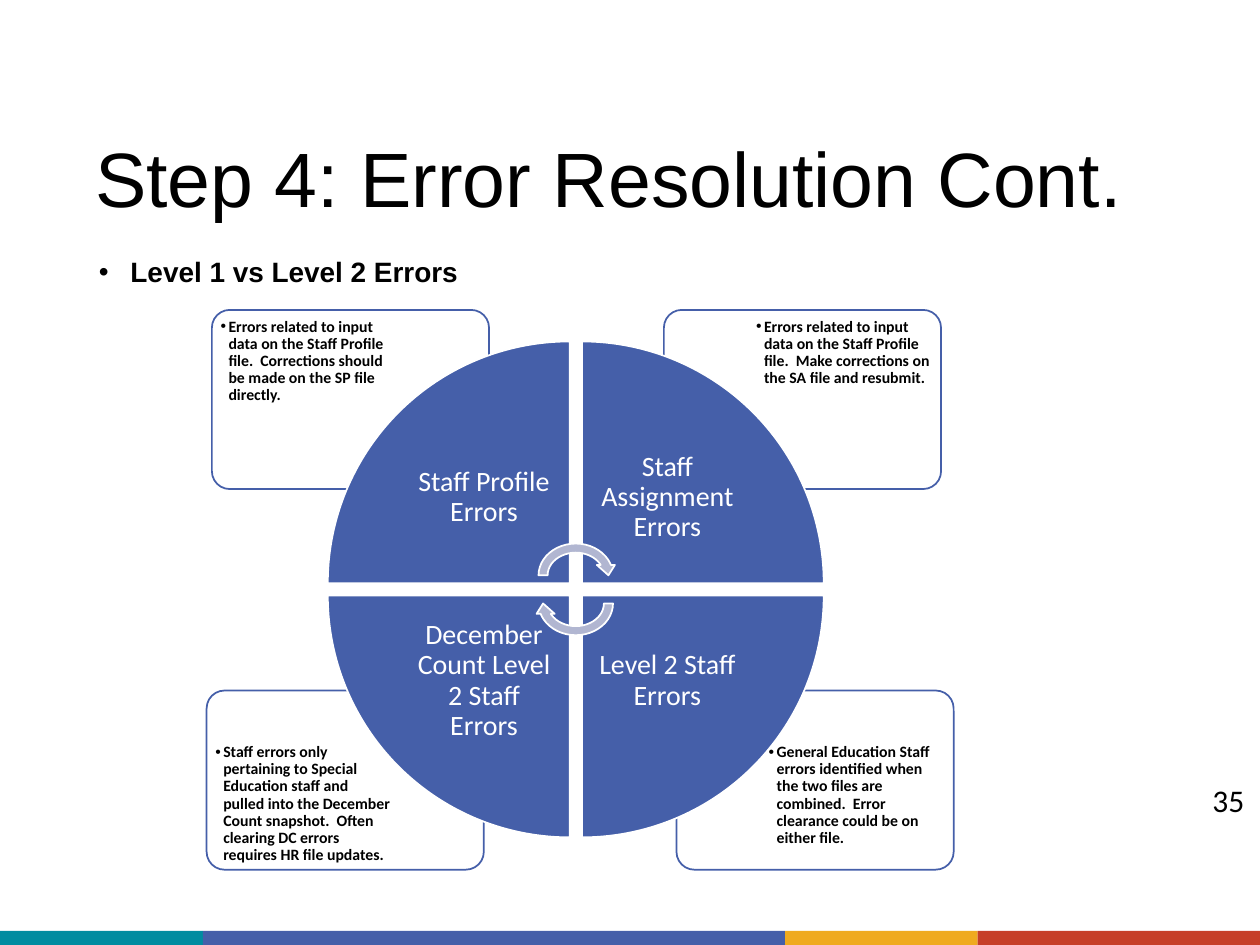
from lxml.etree import SubElement
from pptx import Presentation
from pptx.dml.color import RGBColor
from pptx.enum.shapes import MSO_SHAPE
from pptx.enum.text import MSO_ANCHOR, PP_ALIGN
from pptx.oxml.ns import qn
from pptx.util import Pt

COLORS = {
    "teal": "008CA0", "blue": "455FA9", "gold": "EFAA1F", "red": "C63F28",
    "arrow": "B1B6D1", "white": "FFFFFF", "black": "000000",
}
# Column, row, turn, wedge label, card text, card left and top in the cycle box
PARTS = [
    (1, 1, 180, "Level 2 Staff Errors",
     "General Education Staff errors identified when the two files are "
     "combined.  Error clearance could be on either file.", 268.5, 217.5),
    (0, 1, 270, "December Count Level 2 Staff Errors",
     "Staff errors only pertaining to Special Education staff and pulled into "
     "the December Count snapshot.  Often clearing DC errors requires HR file "
     "updates.", 0, 217.5),
    (1, 0, 90, "Staff Assignment Errors",
     "Errors related to input data on the Staff Profile file.  Make "
     "corrections on the SA file and resubmit.", 261.3, 0),
    (0, 0, 0, "Staff Profile Errors",
     "Errors related to input data on the Staff Profile file.  Corrections "
     "should be made on the SP file directly.", 3, 0),
]


def color(name):
    return RGBColor.from_string(COLORS[name])


def add_shape(slide, kind, box, fill, line=None, turn=0):
    shape = slide.shapes.add_shape(kind, *map(Pt, box))
    shape.shadow.inherit = False
    shape.rotation = turn
    shape.fill.solid()
    shape.fill.fore_color.rgb = color(fill)
    if line:
        shape.line.color.rgb = color(line)
        shape.line.width = Pt(1)
    else:
        shape.line.fill.background()
    return shape


def add_text(slide, box, text, size, face="Calibri", hue="black", bold=False,
             inset=(5, 5), anchor=MSO_ANCHOR.TOP, align=PP_ALIGN.LEFT,
             bullet=0, level=0):
    frame = slide.shapes.add_textbox(*map(Pt, box)).text_frame
    frame.word_wrap = True
    frame.vertical_anchor = anchor
    frame.margin_left = frame.margin_right = Pt(inset[0])
    frame.margin_top = frame.margin_bottom = Pt(inset[1])
    para = frame.paragraphs[0]
    para.text = text
    para.level = level
    para.alignment = align
    para.line_spacing = 0.9
    if bullet:
        props = para._p.get_or_add_pPr()
        props.set("marL", str(Pt(bullet)))
        props.set("indent", str(-Pt(bullet)))
        SubElement(props, qn("a:buFont")).set("typeface", "Arial")
        SubElement(props, qn("a:buChar")).set("char", "•")
    para.font.name = face
    para.font.size = Pt(size)
    para.font.bold = bold
    para.font.color.rgb = color(hue)


def add_stripe(slide, left, top, height):
    bands = [("teal", 116), ("blue", 332.6), ("gold", 110.1), ("red", 161.3)]
    for name, width in bands:
        add_shape(slide, MSO_SHAPE.RECTANGLE, (left, top, width, height), name)
        left += width


def add_head(slide, left, top, width):
    add_text(slide, (left, top, width, 104.4), "Step 4: Error Resolution Cont.",
             44, "Arial", anchor=MSO_ANCHOR.BOTTOM)
    add_text(slide, (left, top + 115.2, width, 342.7),
             "Level 1 vs Level 2 Errors", 16, "Arial", bold=True,
             inset=(7.2, 3.6), bullet=18)


def add_card(slide, left, top, col, row, text):
    card = add_shape(slide, MSO_SHAPE.ROUNDED_RECTANGLE,
                     (left, top, 158.4, 102.4), "white", "blue")
    card.adjustments[0] = 0.1
    tint = card.fill._xPr.find(qn("a:solidFill"))[0]
    SubElement(tint, qn("a:alpha")).set("val", "90000")
    # Text hugs the outer side, clear of the wheel
    box = (left + (50 if col else 2.3), top + (28 if row else 2.3), 106, 72)
    add_text(slide, box, text, 9, bold=True, inset=(2.7, 2.7), bullet=4.5,
             level=1)


def add_wheel(slide, left, top):
    size, gap, inner = 138.2, 7, 97.8
    step = size + gap
    for col, row, turn, label, _, _, _ in reversed(PARTS):
        x, y = left + col * step, top + row * step
        add_shape(slide, MSO_SHAPE.PIE_WEDGE, (x, y, size, size), "blue",
                  "white", turn)
        box = (x + (1 - col) * (size - inner), y + (1 - row) * (size - inner),
               inner, inner)
        add_text(slide, box, label, 16, hue="white", inset=(8.5, 8.5),
                 anchor=MSO_ANCHOR.MIDDLE, align=PP_ALIGN.CENTER)

    # Pair of arrows turning about the centre
    mid = size + gap / 2
    wide, high = 47.7, 41.5
    for turn, shift in ((0, -8), (180, 8)):
        box = (left + mid - wide / 2, top + mid + shift - high / 2, wide, high)
        add_shape(slide, MSO_SHAPE.CIRCULAR_ARROW, box, "arrow", "white", turn)


def add_cycle(slide, left, top):
    for col, row, _, _, text, x, y in PARTS:
        add_card(slide, left + x, top + y, col, row, text)
    add_wheel(slide, left + 69.2, top + 18)


def main():
    deck = Presentation()
    deck.slide_width, deck.slide_height = Pt(720), Pt(540)
    slide = deck.slides.add_slide(deck.slide_layouts[6])
    add_stripe(slide, 0, 532, 8)
    add_head(slide, 49.5, 28.8, 621)
    add_cycle(slide, 118.1, 177.1)
    # Slide number
    add_text(slide, (687.8, 443.5, 32.2, 24.5), "35", 18)
    deck.save("out.pptx")


if __name__ == "__main__":
    main()
